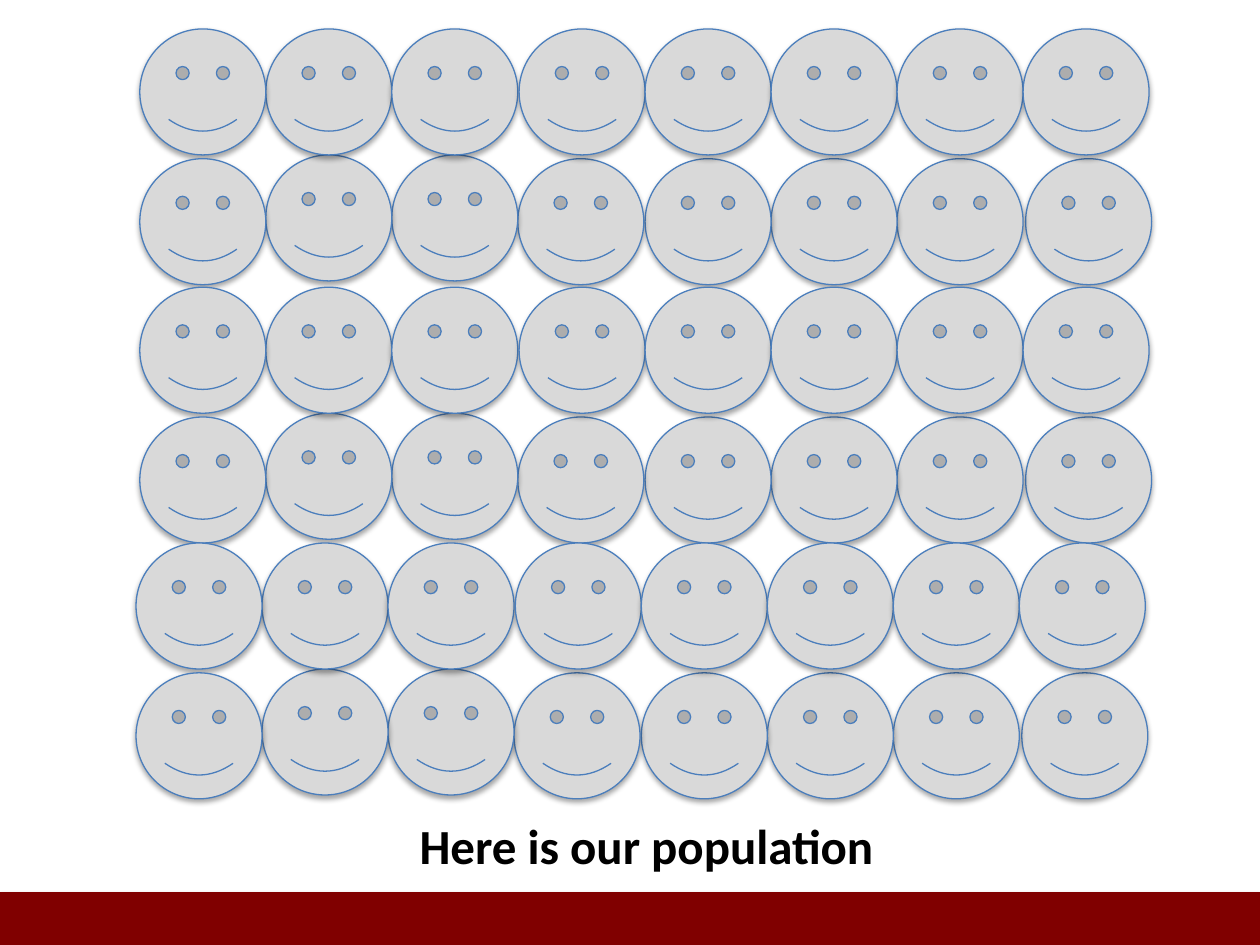
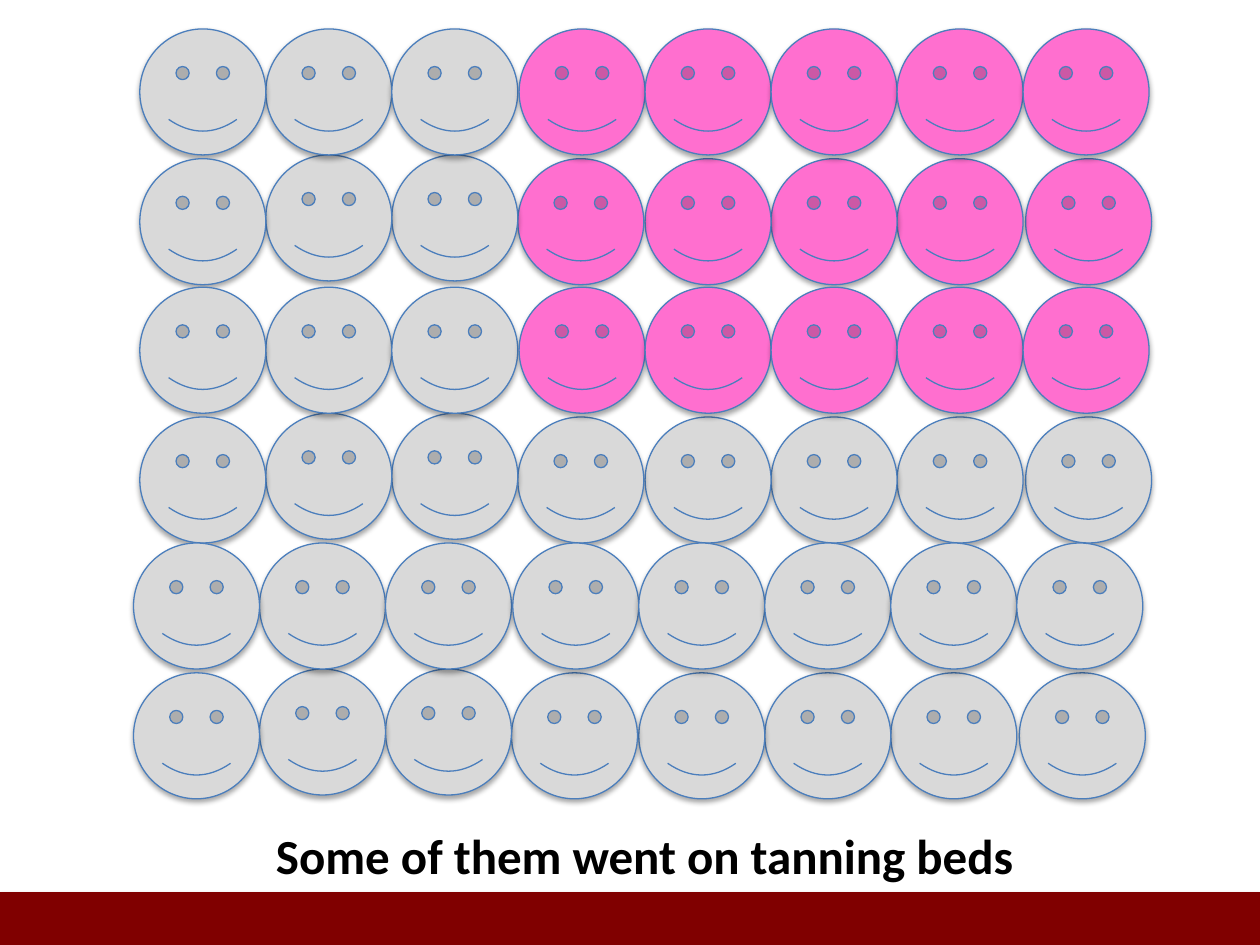
from lxml.etree import SubElement
from pptx import Presentation
from pptx.dml.color import RGBColor
from pptx.enum.shapes import MSO_SHAPE as Kind
from pptx.enum.text import MSO_ANCHOR as Anchor, MSO_AUTO_SIZE as Fit, PP_ALIGN as Align
from pptx.oxml.ns import qn
from pptx.util import Inches, Pt

GREY, PINK, BLUE = "D9D9D9", "FF6FCF", "4B7EBC"
MAROON, BLACK = "800000", "000000"
WIDTH, HEIGHT = 10, 7.5
BAND = 0.42
COLS = 8
FIRST_PINK = 3  # column where the tanned people start


def tint(text):
    return RGBColor.from_string(text)


def draw(shapes, kind, box, color):
    """Add a filled shape with the soft shadow that every shape here has."""
    shape = shapes.add_shape(kind, *map(Inches, box))
    shape.fill.solid()
    shape.fill.fore_color.rgb = tint(color)
    shape.shadow.inherit = False
    effects = shape.element.spPr.find(qn("a:effectLst"))
    shade = SubElement(effects, qn("a:outerShdw"), blurRad=str(Pt(3.1)),
                       dist=str(Pt(1.8)), dir="5400000", rotWithShape="0")
    black = SubElement(shade, qn("a:srgbClr"), val=BLACK)
    SubElement(black, qn("a:alpha"), val="35000")
    return shape


# Caption, its box, left edge of the last block, number of rows with pink faces
pages = [
    ("Here is our population", (3.23, 6.42, 3.85, 0.57), 1.08, 0),
    ("Some of them went on tanning beds", (2.09, 6.5, 6.13, 0.57), 1.06, 3),
]

# Small shifts of each column in the upper and lower row of a block
shifts = [
    [(0, 0)] * 3 + [(0.01, 0)] * 5,
    [(0, 0.03), (0, 0), (0, 0), (0, 0.03)] + [(0.01, 0.03)] * 3 + [(0.03, 0.03)],
]
# Faces of a block from back to front, as (row, column)
order = [(1, col) for col in range(COLS - 1, 0, -1)]
order += [(0, col) for col in (1, 0, *range(2, COLS))] + [(1, 0)]

deck = Presentation()
deck.slide_width, deck.slide_height = Inches(WIDTH), Inches(HEIGHT)
layout = deck.slide_layouts[5]

for words, box, last, tanned in pages:
    slide = deck.slides.add_slide(layout)
    band = draw(slide.shapes, Kind.RECTANGLE, (0, HEIGHT - BAND, WIDTH, BAND), MAROON)
    band.line.fill.background()

    for block, (left, top) in enumerate([(1.11, 0.23), (1.11, 2.28), (last, 4.31)]):
        group = slide.shapes.add_group_shape()
        for row, col in order:
            dx, dy = shifts[row][col]
            pink = col >= FIRST_PINK and 2 * block + row < tanned
            face = draw(group.shapes, Kind.SMILEY_FACE,
                        (left + col + dx, top + row + dy, 1, 1),
                        PINK if pink else GREY)
            face.line.color.rgb = tint(BLUE)
            face.line.width = Pt(0.75)

    title = slide.shapes.title
    title.left, title.top, title.width, title.height = map(Inches, box)
    frame = title.text_frame
    frame.text = words
    frame.word_wrap = False
    frame.auto_size = Fit.NONE
    frame.vertical_anchor = Anchor.TOP
    line = frame.paragraphs[0]
    line.alignment = Align.LEFT
    font = line.runs[0].font
    font.name, font.size, font.bold = "Calibri", Pt(28), True
    font.color.rgb = tint(BLACK)

deck.save("out.pptx")
